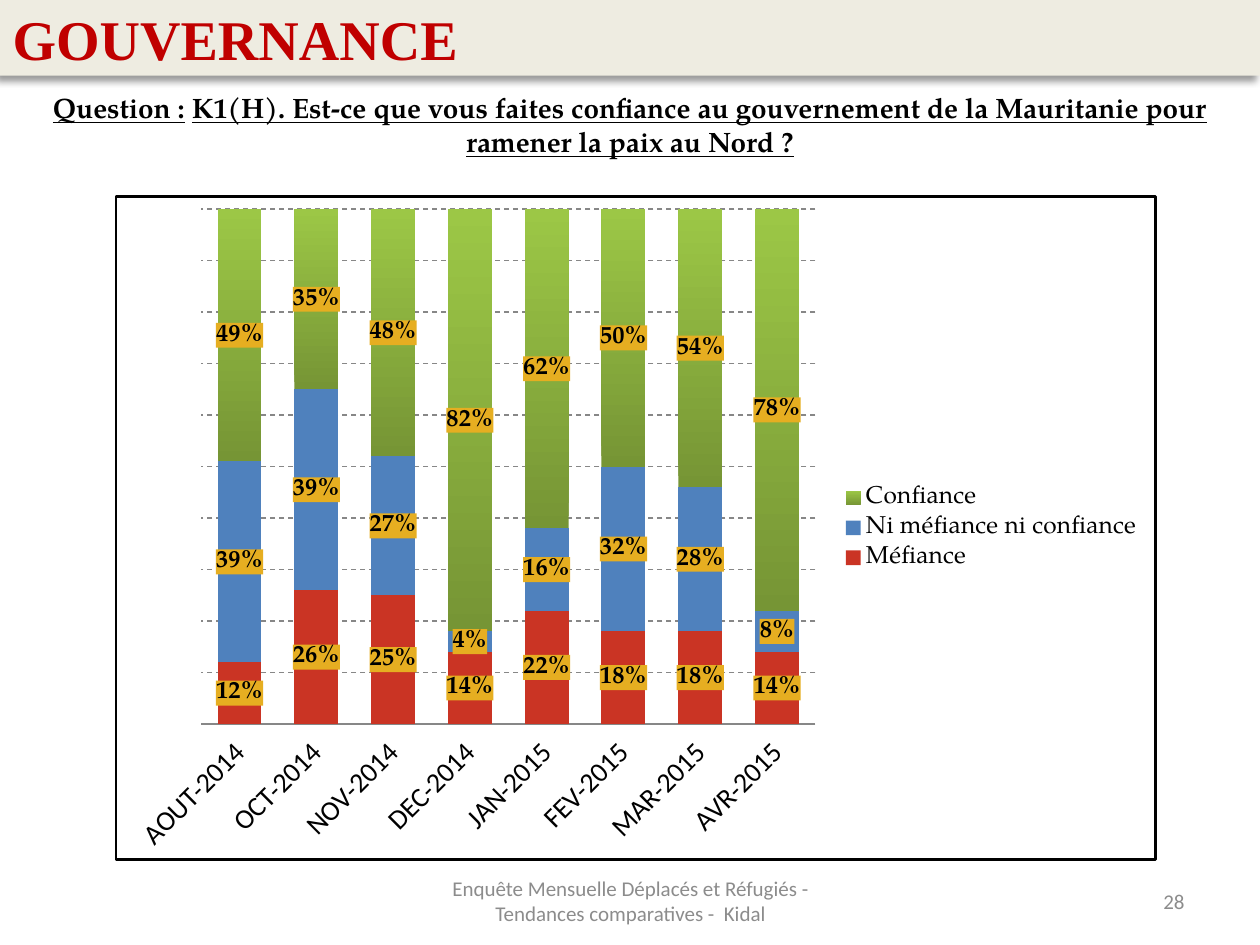
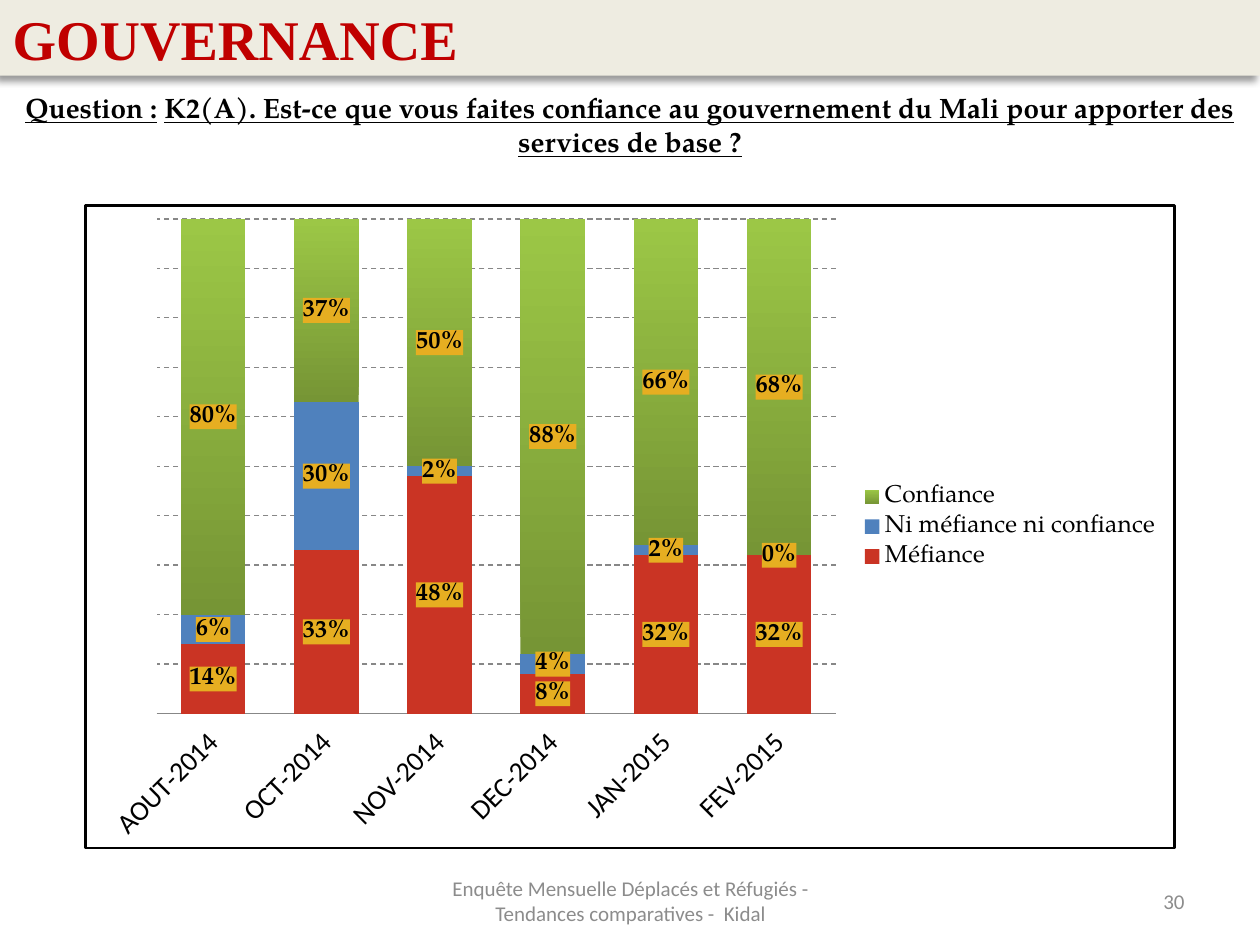
from lxml import etree
from pptx import Presentation
from pptx.chart.data import CategoryChartData
from pptx.dml.color import RGBColor
from pptx.enum.chart import XL_CHART_TYPE, XL_LEGEND_POSITION, XL_TICK_LABEL_POSITION, XL_TICK_MARK
from pptx.enum.dml import MSO_LINE
from pptx.enum.text import MSO_ANCHOR, MSO_AUTO_SIZE, PP_ALIGN
from pptx.oxml import parse_xml
from pptx.oxml.ns import nsdecls, qn
from pptx.util import Inches, Pt

COLORS = {
    "band": "EEECE1",
    "title": "C00000",
    "text": "000000",
    "footer": "8C8C8C",
    "grid": "878787",
    "label": "E6AE21",
    "frame": "FFFFFF",
    "distrust": "CA3424",
    "neutral": "4F81BD",
    "trust_dark": "769535",
    "trust_light": "9CC746",
}
SERIF = "TeX Gyre Pagella"
SANS = "Calibri"
FOOTER = "Enquête Mensuelle Déplacés et Réfugiés - Tendances comparatives -  Kidal"
SERIES_NAMES = ("Méfiance", "Ni méfiance ni confiance", "Confiance")
MONTHS = ("AOUT-2014", "OCT-2014", "NOV-2014", "DEC-2014",
          "JAN-2015", "FEV-2015", "MAR-2015", "AVR-2015")

SURVEYS = [
    {
        "number": "28",
        "question": "K1(H). Est-ce que vous faites confiance au gouvernement "
                    "de la Mauritanie pour ramener la paix au Nord ?",
        "frame": (0.91, 1.55, 8.27, 5.28),
        "plot": (1.59, 1.65, 4.89, 4.1),
        "values": [
            (0.12, 0.26, 0.25, 0.14, 0.22, 0.18, 0.18, 0.14),
            (0.39, 0.39, 0.27, 0.04, 0.16, 0.32, 0.28, 0.08),
            (0.49, 0.35, 0.48, 0.82, 0.62, 0.5, 0.54, 0.78),
        ],
    },
    {
        "number": "30",
        "question": "K2(A). Est-ce que vous faites confiance au gouvernement "
                    "du Mali pour apporter des services de base ?",
        "frame": (0.67, 1.62, 8.66, 5.12),
        "plot": (1.23, 1.73, 5.4, 3.94),
        "values": [
            (0.14, 0.33, 0.48, 0.08, 0.32, 0.32),
            (0.06, 0.3, 0.02, 0.04, 0.02, 0),
            (0.8, 0.37, 0.5, 0.88, 0.66, 0.68),
        ],
    },
]


def rgb(name):
    return RGBColor.from_string(COLORS[name])


def format_font(font, size, face, color="text", bold=False):
    font.size = Pt(size)
    font.name = face
    font.bold = bold
    font.color.rgb = rgb(color)


def place(shape, left, top, width, height):
    shape.left, shape.top = Inches(left), Inches(top)
    shape.width, shape.height = Inches(width), Inches(height)


def add_title_band(slide, text):
    title = slide.shapes.title
    place(title, 0, 0, 10, 0.6)
    title.fill.solid()
    title.fill.fore_color.rgb = rgb("band")
    title._element.spPr.append(parse_xml(
        f'<a:effectLst {nsdecls("a")}>'
        '<a:outerShdw blurRad="50800" dist="50800" dir="8100000" algn="tr" rotWithShape="0">'
        '<a:srgbClr val="000000"><a:alpha val="40000"/></a:srgbClr>'
        '</a:outerShdw></a:effectLst>'))
    frame = title.text_frame
    frame.text = text
    frame.auto_size = MSO_AUTO_SIZE.NONE
    frame.vertical_anchor = MSO_ANCHOR.MIDDLE
    frame.paragraphs[0].alignment = PP_ALIGN.LEFT
    format_font(frame.paragraphs[0].runs[0].font, 32, "Times New Roman", "title", True)


def add_text(slide, box, alignment, anchor=MSO_ANCHOR.MIDDLE):
    frame = slide.shapes.add_textbox(*map(Inches, box)).text_frame
    frame.word_wrap = True
    frame.vertical_anchor = anchor
    frame.paragraphs[0].alignment = alignment
    return frame.paragraphs[0]


def add_question(slide, question):
    paragraph = add_text(slide, (0, 0.67, 10, 0.64), PP_ALIGN.CENTER, MSO_ANCHOR.TOP)
    for text, underlined in (("Question :", True), (" ", False), (question, True)):
        run = paragraph.add_run()
        run.text = text
        format_font(run.font, 16, SERIF, bold=True)
        run.font.underline = underlined


def add_footer_text(slide, text, left, width, alignment):
    paragraph = add_text(slide, (left, 6.95, width, 0.4), alignment)
    paragraph.text = text
    format_font(paragraph.runs[0].font, 12, SANS, "footer")


def shape_properties(fill, line=None, width=0):
    outline = (f'<a:ln w="{Pt(width)}"><a:solidFill><a:srgbClr val="{COLORS[line]}"/>'
               '</a:solidFill></a:ln>') if line else ""
    return parse_xml(
        f'<c:spPr {nsdecls("c", "a")}><a:solidFill><a:srgbClr val="{COLORS[fill]}"/>'
        f'</a:solidFill>{outline}</c:spPr>')


def set_plot_layout(chart, frame, plot):
    plot_area = chart._chartSpace.chart.plotArea
    for layout in plot_area.findall(qn("c:layout")):
        plot_area.remove(layout)
    fractions = {
        "x": (plot[0] - frame[0]) / frame[2],
        "y": (plot[1] - frame[1]) / frame[3],
        "w": plot[2] / frame[2],
        "h": plot[3] / frame[3],
    }
    layout = etree.Element(qn("c:layout"))
    manual = etree.SubElement(layout, qn("c:manualLayout"))
    settings = {"layoutTarget": "inner", "xMode": "edge", "yMode": "edge"}
    settings.update({key: f"{value:.3f}" for key, value in fractions.items()})
    for tag, value in settings.items():
        etree.SubElement(manual, qn(f"c:{tag}")).set("val", value)
    plot_area.insert(0, layout)


def format_axes(chart):
    months = chart.category_axis
    months.major_tick_mark = XL_TICK_MARK.NONE
    months.tick_label_position = XL_TICK_LABEL_POSITION.LOW
    months.format.line.color.rgb = rgb("grid")
    format_font(months.tick_labels.font, 16, SANS)
    months._element.find(qn("c:txPr")).find(qn("a:bodyPr")).set("rot", "-2700000")
    shares = chart.value_axis
    shares.minimum_scale, shares.maximum_scale, shares.major_unit = 0, 1, 0.1
    shares.visible = False
    shares.has_major_gridlines = True
    gridline = shares.major_gridlines.format.line
    gridline.color.rgb = rgb("grid")
    gridline.width = Pt(0.75)
    gridline.dash_style = MSO_LINE.DASH


def format_series(series, color):
    fill = series.format.fill
    if color == "trust":
        fill.gradient()
        fill.gradient_angle = 90
        for stop, name, position in zip(fill.gradient_stops, ("trust_dark", "trust_light"), (0, 1)):
            stop.color.rgb = rgb(name)
            stop.position = position
    else:
        fill.solid()
        fill.fore_color.rgb = rgb(color)
    labels = series.data_labels
    labels.show_value = True
    labels.number_format = "0%"
    labels.number_format_is_linked = False
    format_font(labels.font, 14, SERIF, bold=True)
    labels._element.find(qn("c:txPr")).addprevious(shape_properties("label"))


def add_trust_chart(slide, frame, plot, values):
    data = CategoryChartData(number_format="0%")
    data.categories = MONTHS[:len(values[0])]
    for name, shares in zip(SERIES_NAMES, values):
        data.add_series(name, shares)
    chart = slide.shapes.add_chart(
        XL_CHART_TYPE.COLUMN_STACKED_100, *map(Inches, frame), data).chart
    chart.has_title = False
    format_font(chart.font, 10, SANS)
    chart._chartSpace.find(qn("c:txPr")).addprevious(shape_properties("frame", "text", 1.5))
    chart.has_legend = True
    chart.legend.position = XL_LEGEND_POSITION.RIGHT
    chart.legend.include_in_layout = False
    format_font(chart.legend.font, 14, SERIF)
    columns = chart.plots[0]
    columns.gap_width = 75
    columns.overlap = 100
    columns.vary_by_categories = False
    for series, color in zip(columns.series, ("distrust", "neutral", "trust")):
        format_series(series, color)
    format_axes(chart)
    set_plot_layout(chart, frame, plot)


def add_survey_slide(presentation, survey):
    slide = presentation.slides.add_slide(presentation.slide_layouts[5])
    add_title_band(slide, "GOUVERNANCE")
    add_question(slide, survey["question"])
    add_trust_chart(slide, survey["frame"], survey["plot"], survey["values"])
    add_footer_text(slide, FOOTER, 3.42, 3.17, PP_ALIGN.CENTER)
    add_footer_text(slide, survey["number"], 7.17, 2.33, PP_ALIGN.RIGHT)


def main():
    presentation = Presentation()
    presentation.slide_width = Inches(10)
    presentation.slide_height = Inches(7.5)
    for survey in SURVEYS:
        add_survey_slide(presentation, survey)
    presentation.save("out.pptx")


if __name__ == "__main__":
    main()
